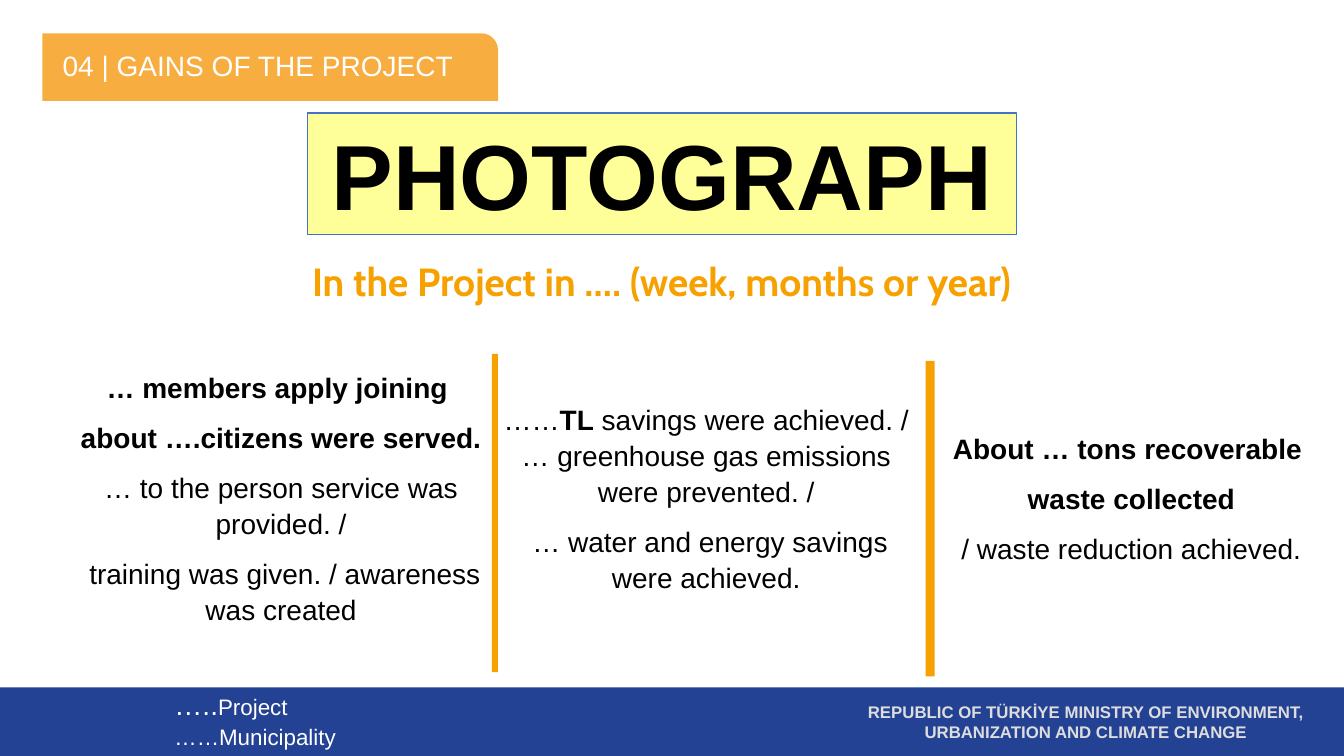
from pptx import Presentation
from pptx.dml.color import RGBColor
from pptx.enum.shapes import MSO_SHAPE
from pptx.enum.text import MSO_ANCHOR, MSO_AUTO_SIZE, PP_ALIGN
from pptx.util import Inches, Pt

BLUE, ORANGE, LIGHT_ORANGE = "244293", "F6A100", "F8AD41"
YELLOW, OUTLINE = "FFFF99", "4472C4"
BLACK, WHITE, GREY = "000000", "FFFFFF", "DDDDDD"


def rgb(hex_color):
    return RGBColor.from_string(hex_color)


def write_text(frame, paragraphs, color, font_format, paragraph_format):
    """Each paragraph is a list of (text, font overrides) runs."""
    frame.word_wrap = True
    for index, runs in enumerate(paragraphs):
        paragraph = frame.paragraphs[0] if index == 0 else frame.add_paragraph()
        for name, value in paragraph_format.items():
            setattr(paragraph, name, value)
        for text, overrides in runs:
            run = paragraph.add_run()
            run.text = text
            run.font.color.rgb = rgb(color)
            for name, value in {**font_format, **overrides}.items():
                setattr(run.font, name, value)


presentation = Presentation()
presentation.slide_width = Inches(13.33)
presentation.slide_height = Inches(7.5)
slide = presentation.slides.add_slide(presentation.slide_layouts[6])
shapes = slide.shapes

# Areas: left, top, width, height in percent of the slide
areas = {
    "footer": (0, 90.93, 100, 9.07),
    "tab": (3.15, 4.4, 33.91, 8.93),
    "left divider": (36.61, 46.8, 0.45, 42.13),
    "right divider": (68.87, 47.73, 0.68, 41.73),
    "photograph": (22.88, 14.93, 52.74, 16.13),
    "ministry": (60.09, 92.8, 41.41, 5.33),
    "period": (3.83, 34, 90.77, 6.27),
    "project": (12.98, 91.73, 22.81, 7.47),
    "title": (-2.93, 3.07, 43.66, 11.6),
    "gains": (5.1, 41.73, 94.9, 48.13),
}
sides = (presentation.slide_width, presentation.slide_height) * 2
areas = {
    name: [int(side * share / 100) for side, share in zip(sides, area)]
    for name, area in areas.items()
}

# Gains table
gains = [
    [
        [("… members apply joining ", {"bold": True})],
        [("about ….citizens were served.", {"bold": True})],
        [("… to the person service was provided. /", {})],
        [(" training was given. / awareness was created", {})],
    ],
    [
        [
            ("……", {}),
            ("TL", {"bold": True}),
            (" savings were achieved. / … greenhouse gas emissions were prevented. /", {}),
        ],
        [(" … water and energy savings were achieved.", {})],
    ],
    [
        [("About … tons recoverable ", {"bold": True})],
        [("waste collected", {"bold": True})],
        [("/ waste reduction achieved.", {})],
    ],
]
table = shapes.add_table(1, len(gains), *areas["gains"]).table
table.first_row = table.horz_banding = False
cell_format = {
    "vertical_anchor": MSO_ANCHOR.MIDDLE,
    "margin_left": Inches(0.07),
    "margin_right": Inches(0.07),
    "margin_top": 0,
    "margin_bottom": 0,
}
for cell, paragraphs in zip(table.rows[0].cells, gains):
    cell.fill.background()
    for name, value in cell_format.items():
        setattr(cell, name, value)
    write_text(
        cell.text_frame, paragraphs, BLACK,
        {"name": "Arial", "size": Pt(20), "bold": False},
        {"alignment": PP_ALIGN.CENTER, "line_spacing": 1.15, "space_after": Pt(10)},
    )

# Filled shapes: footer, title tab, dividers, photograph frame
filled_shapes = {}
for name, preset, color in [
    ("footer", MSO_SHAPE.RECTANGLE, BLUE),
    ("tab", MSO_SHAPE.ROUND_1_RECTANGLE, LIGHT_ORANGE),
    ("left divider", MSO_SHAPE.RECTANGLE, ORANGE),
    ("right divider", MSO_SHAPE.RECTANGLE, ORANGE),
    ("photograph", MSO_SHAPE.RECTANGLE, YELLOW),
]:
    shape = shapes.add_shape(preset, *areas[name])
    shape.shadow.inherit = False
    shape.fill.solid()
    shape.fill.fore_color.rgb = rgb(color)
    shape.line.fill.background()
    filled_shapes[name] = shape
filled_shapes["tab"].adjustments[0] = 0.25
photograph = filled_shapes["photograph"]
photograph.line.color.rgb = rgb(OUTLINE)
photograph.line.width = Pt(1)

# Texts: name, paragraphs, colour, font, paragraph format, inset, anchor
centred = {"alignment": PP_ALIGN.CENTER}
texts = [
    ("photograph", [[("PHOTOGRAPH", {})]], BLACK,
     {"name": "Arial", "size": Pt(66), "bold": True}, centred, 0.05, MSO_ANCHOR.TOP),
    ("ministry",
     [[("REPUBLIC OF TÜRKİYE MINISTRY OF ENVIRONMENT,", {})],
      [("URBANIZATION AND CLIMATE CHANGE", {})]], GREY,
     {"name": "Arial", "size": Pt(12), "bold": True}, centred, 0, MSO_ANCHOR.TOP),
    ("period", [[("In the Project in …. (week, months or year)", {})]], ORANGE,
     {"name": "Cabin", "size": Pt(28), "bold": True}, centred, 0, MSO_ANCHOR.TOP),
    ("project",
     [[("…..", {"size": Pt(20)}), ("Project", {})], [("……Municipality", {})]], WHITE,
     {"name": "Arial", "size": Pt(16)}, {"line_spacing": Pt(20)}, 0, MSO_ANCHOR.TOP),
    ("title", [[(" 04 | GAINS OF THE PROJECT", {})]], WHITE,
     {"name": "Arial", "size": Pt(20)}, {**centred, "line_spacing": 0.9}, 0.05,
     MSO_ANCHOR.MIDDLE),
]
for name, paragraphs, color, font_format, paragraph_format, inset, anchor in texts:
    shape = filled_shapes.get(name) or shapes.add_textbox(*areas[name])
    frame = shape.text_frame
    for side in ("left", "top", "right", "bottom"):
        setattr(frame, f"margin_{side}", Inches(inset))
    frame.vertical_anchor = anchor
    if anchor == MSO_ANCHOR.TOP:
        frame.auto_size = MSO_AUTO_SIZE.SHAPE_TO_FIT_TEXT
    write_text(frame, paragraphs, color, font_format, paragraph_format)

presentation.save("out.pptx")
